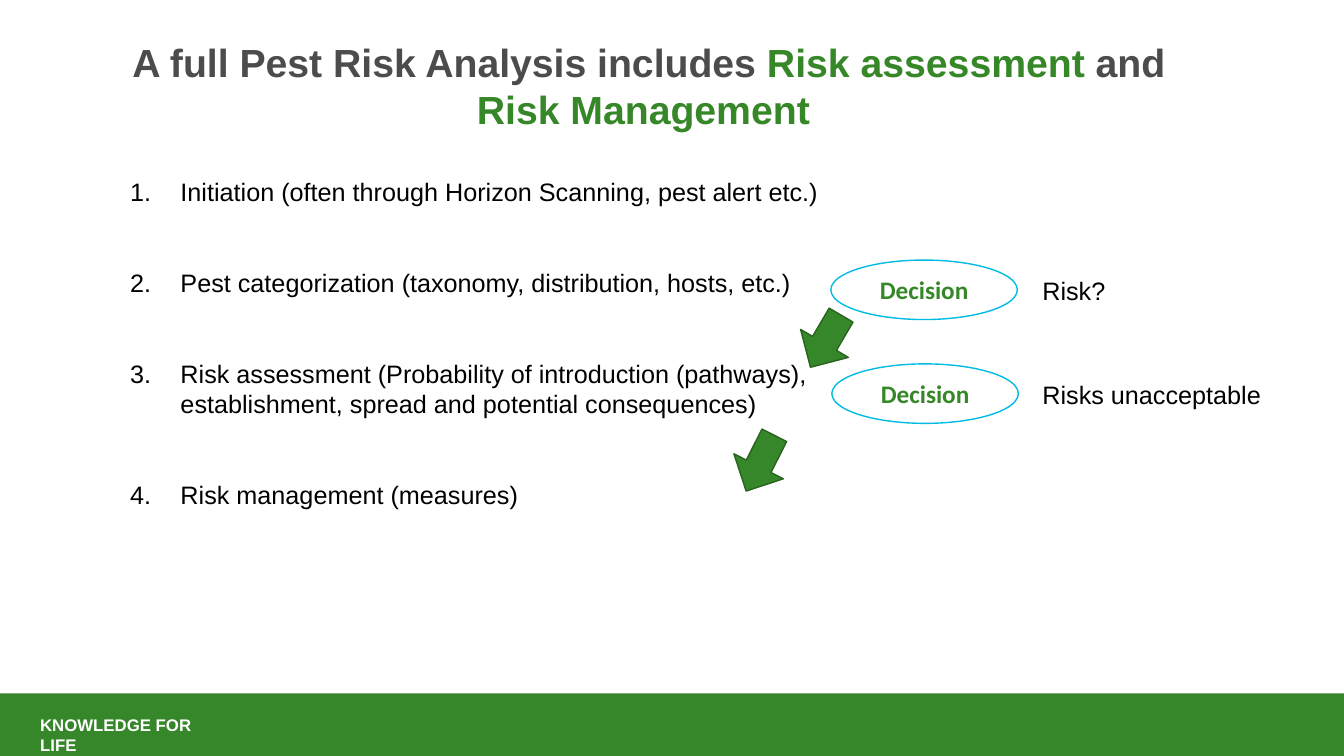
from lxml.etree import SubElement
from pptx import Presentation
from pptx.dml.color import RGBColor
from pptx.enum.shapes import MSO_SHAPE as SHAPE
from pptx.enum.text import MSO_ANCHOR as ANCHOR, MSO_AUTO_SIZE as AUTO, PP_ALIGN as ALIGN
from pptx.oxml.ns import qn
from pptx.util import Inches, Pt

COLORS = {
    "band": "368729",
    "green": "368728",
    "grey": "4C4C4C",
    "black": "000000",
    "white": "FFFFFF",
    "cyan": "00BCE3",
    "edge": "28641E",
}


class SlideBuilder:
    """Hold the style and the current slide."""

    def __init__(self, prs):
        """Add a title-and-content slide."""
        self.s = prs.slides.add_slide(prs.slide_layouts[1])

    def color(self, name):
        """Look up a named colour."""
        return RGBColor.from_string(COLORS[name])

    def place(self, sp, box):
        """Move a shape to left, top, width, height in inches."""
        sp.left, sp.top, sp.width, sp.height = map(Inches, box)

    def run(self, p, text, size, color, bold=False, font="Arial"):
        """Append one formatted run."""
        r = p.add_run()
        r.text = text
        r.font.name, r.font.size, r.font.bold = font, Pt(size), bold
        r.font.color.rgb = self.color(color)

    def title(self, box, parts):
        """Fill the title with (text, colour) parts."""
        sp = self.s.shapes.title
        self.place(sp, box)
        tf = sp.text_frame
        tf.auto_size, tf.vertical_anchor = AUTO.NONE, ANCHOR.TOP
        p = tf.paragraphs[0]
        p.alignment = ALIGN.CENTER
        for text, color in parts:
            self.run(p, text, 28, color, bold=True)

    def numbered(self, box, items, gap):
        """Fill the body with a numbered list, gap in points."""
        sp = self.s.placeholders[1]
        self.place(sp, box)
        tf = sp.text_frame
        tf.auto_size, tf.vertical_anchor = AUTO.NONE, ANCHOR.TOP
        for i, text in enumerate(items):
            p = tf.add_paragraph() if i else tf.paragraphs[0]
            pPr = p._p.get_or_add_pPr()
            pPr.set("marL", str(Inches(0.5)))
            pPr.set("indent", str(-Inches(0.5)))
            SubElement(pPr, qn("a:buFont"), typeface="Arial")
            SubElement(pPr, qn("a:buAutoNum"), type="arabicPeriod")
            p.space_before = Pt(gap if i else 0)
            self.run(p, text, 18, "black")

    def shape(self, kind, box, fill, line=None, rotation=0):
        """Add a filled preset shape."""
        sp = self.s.shapes.add_shape(kind, *map(Inches, box))
        sp.shadow.inherit = False
        sp.rotation = rotation
        sp.fill.solid()
        sp.fill.fore_color.rgb = self.color(fill)
        if line:
            sp.line.color.rgb = self.color(line)
            sp.line.width = Pt(1)
        else:
            sp.line.fill.background()
        return sp

    def decision(self, left, top):
        """Add a decision ellipse."""
        sp = self.shape(SHAPE.OVAL, (left, top, 1.85, 0.59), "white", "cyan")
        tf = sp.text_frame
        tf.word_wrap, tf.vertical_anchor = False, ANCHOR.MIDDLE
        p = tf.paragraphs[0]
        p.alignment = ALIGN.CENTER
        self.run(p, "Decision", 18, "green", bold=True, font="Calibri")

    def label(self, box, text, size=18, color="black", bold=False, wrap=False):
        """Add a text box with one run."""
        tf = self.s.shapes.add_textbox(*map(Inches, box)).text_frame
        tf.word_wrap = wrap
        self.run(tf.paragraphs[0], text, size, color, bold)


def main():
    """Build and save the slide."""
    prs = Presentation()
    prs.slide_width, prs.slide_height = Inches(13.33), Inches(7.5)
    b = SlideBuilder(prs)
    b.shape(SHAPE.RECTANGLE, (0, 6.88, 13.33, 0.62), "band")
    b.label((0.3, 7.04, 1.76, 0.3), "KNOWLEDGE FOR LIFE", 12, "white", bold=True, wrap=True)
    b.title((1.08, 0.33, 10.71, 1.25), [
        ("A full Pest Risk Analysis includes ", "grey"),
        ("Risk assessment ", "green"),
        ("and ", "grey"),
        ("Risk Management ", "green"),
    ])
    b.numbered((1.19, 1.7, 7.05, 3.43), [
        "Initiation (often through Horizon Scanning, pest alert etc.)",
        "Pest categorization (taxonomy, distribution, hosts, etc.)",
        "Risk assessment (Probability of introduction (pathways), "
        "establishment, spread and potential consequences)",
        "Risk management (measures)",
    ], gap=43.2)
    steps = [
        (8.24, 2.58, "Risk?", 0.83, (7.89, 3.11, 0.6, 0.55), 120.4),
        (8.25, 3.61, "Risks unacceptable", 2.39, (7.23, 4.32, 0.62, 0.55), 116.8),
    ]
    for left, top, text, width, arrow, angle in steps:
        b.decision(left, top)
        b.shape(SHAPE.RIGHT_ARROW, arrow, "band", "edge", angle)
        b.label((10.24, top + 0.1, width, 0.4), text)
    prs.save("out.pptx")


if __name__ == "__main__":
    main()
